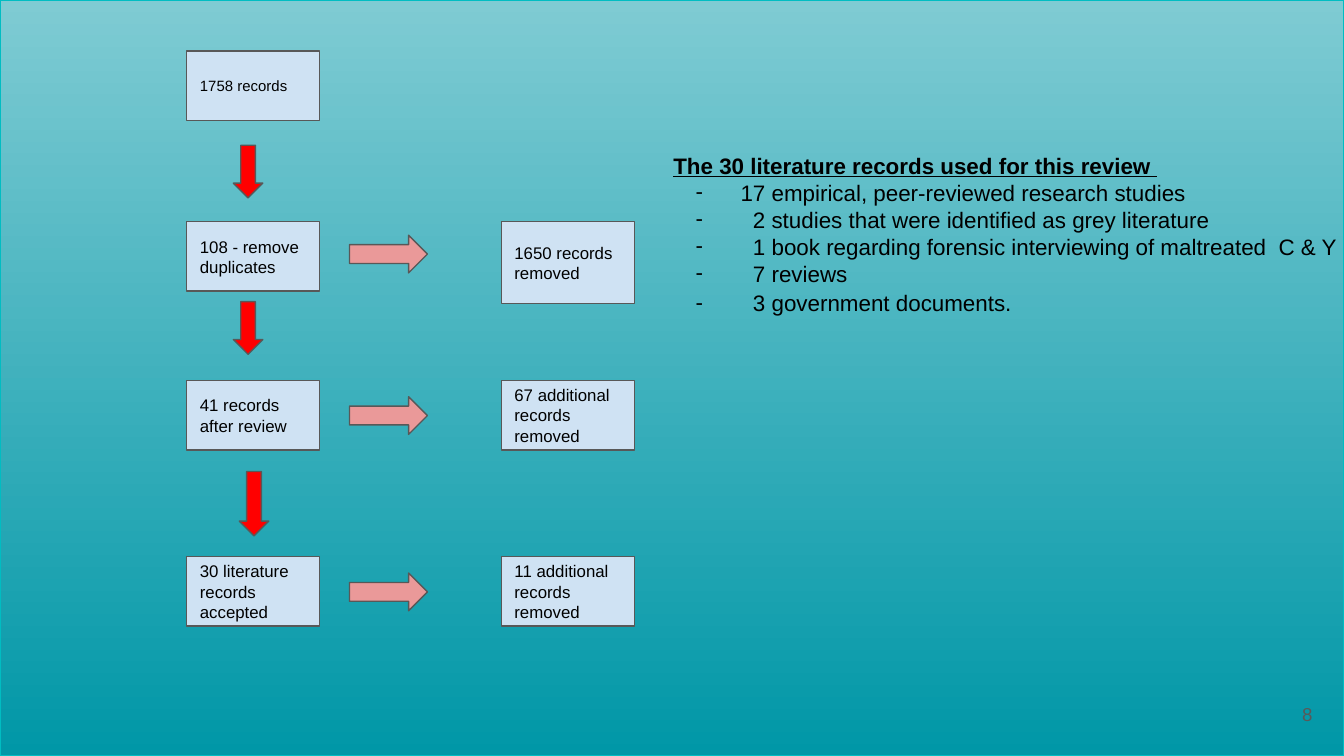
from lxml.etree import SubElement
from pptx import Presentation
from pptx.dml.color import RGBColor
from pptx.enum.shapes import MSO_SHAPE
from pptx.enum.text import MSO_ANCHOR, MSO_AUTO_SIZE, PP_ALIGN
from pptx.oxml.ns import qn
from pptx.util import Pt

COLORS = {
    "background_bottom": "0097A7",
    "background_top": "7FCBD3",
    "background_line": "00BDC2",
    "box": "CFE2F3",
    "outline": "585858",
    "down_arrow": "FF0000",
    "right_arrow": "EA9999",
    "text": "000000",
    "number": "595959",
}
SLIDE_WIDTH, SLIDE_HEIGHT = 720, 405
KEPT_LEFT, REMOVED_LEFT = 100, 268.5
BOX_WIDTH, BOX_HEIGHT = 71.3, 37.2

# top, arrow top, kept records, removed records, height of the removed box
STAGES = [
    (118.8, 126, "108 - remove duplicates", "1650 records removed", 43.9),
    (203.9, 212.5, "41 records after review", "67 additional records removed", BOX_HEIGHT),
    (298.3, 307, "30 literature records accepted", "11 additional records removed", BOX_HEIGHT),
]
# left, top, height
DOWN_ARROWS = [(125, 77.8, 28.2), (125, 161.6, 28.2), (128.2, 252.6, 34.5)]
HEADING = "The 30 literature records used for this review "
# text, extra indent that lines up the single digits, space before
RECORD_TYPES = [
    ("17 empirical, peer-reviewed research studies", 0, 0),
    ("2 studies that were identified as grey literature", 6.67, 0),
    ("1 book regarding forensic interviewing of maltreated  C & Y", 6.67, 0),
    ("7 reviews", 6.67, 0),
    ("3 government documents.", 6.67, 1.6),
]


def color(name):
    return RGBColor.from_string(COLORS[name])


def add_text(paragraph, text, size=9, color_name="text", bold=False,
             underline=False, align=PP_ALIGN.LEFT):
    paragraph.text = text
    paragraph.alignment = align
    font = paragraph.font
    font.name = "Arial"
    font.size = Pt(size)
    font.bold = bold
    font.underline = underline
    font.color.rgb = color(color_name)


def set_frame(frame, horizontal=7.2, vertical=0, right=None, anchor=MSO_ANCHOR.MIDDLE):
    frame.word_wrap = True
    frame.auto_size = MSO_AUTO_SIZE.NONE
    frame.vertical_anchor = anchor
    frame.margin_left = Pt(horizontal)
    frame.margin_right = Pt(horizontal if right is None else right)
    frame.margin_top = frame.margin_bottom = Pt(vertical)


def add_shape(slide, kind, left, top, width, height, fill=None, line="outline"):
    shape = slide.shapes.add_shape(kind, Pt(left), Pt(top), Pt(width), Pt(height))
    shape.shadow.inherit = False
    if fill:
        shape.fill.solid()
        shape.fill.fore_color.rgb = color(fill)
    shape.line.color.rgb = color(line)
    shape.line.width = Pt(0.75)
    return shape


def add_background(slide):
    shape = add_shape(slide, MSO_SHAPE.RECTANGLE, 0, 0, SLIDE_WIDTH, SLIDE_HEIGHT,
                      line="background_line")
    shape.fill.gradient()
    shape.fill.gradient_angle = 90
    names = ("background_bottom", "background_top")
    for stop, position, name in zip(shape.fill.gradient_stops, (0, 1), names):
        stop.position = position
        stop.color.rgb = color(name)


def add_box(slide, left, top, text, height=BOX_HEIGHT, size=9):
    shape = add_shape(slide, MSO_SHAPE.RECTANGLE, left, top, BOX_WIDTH, height, "box")
    set_frame(shape.text_frame)
    add_text(shape.text_frame.paragraphs[0], text, size=size)


def add_dash(paragraph, extra):
    properties = paragraph._p.get_or_add_pPr()
    properties.set("marL", str(Pt(36 + extra)))
    properties.set("indent", str(-Pt(24 + extra)))
    bullet_color = SubElement(properties, qn("a:buClr"))
    SubElement(bullet_color, qn("a:srgbClr"), val=COLORS["text"])
    SubElement(properties, qn("a:buFont"), typeface="Arial")
    SubElement(properties, qn("a:buChar"), char="-")


def remove_bullet(paragraph):
    properties = paragraph._p.get_or_add_pPr()
    properties.set("marL", "0")
    properties.set("indent", "0")
    SubElement(properties, qn("a:buNone"))


def fill_record_list(body):
    body.left, body.top, body.width, body.height = Pt(353.5), Pt(74), Pt(366.5), Pt(106)
    frame = body.text_frame
    set_frame(frame, vertical=7.2, right=0, anchor=MSO_ANCHOR.TOP)
    heading = frame.paragraphs[0]
    remove_bullet(heading)
    add_text(heading, HEADING, size=12, bold=True, underline=True)
    for text, extra, space_before in RECORD_TYPES:
        paragraph = frame.add_paragraph()
        add_dash(paragraph, extra)
        add_text(paragraph, text, size=12)
        paragraph.space_before = Pt(space_before)
    for paragraph in frame.paragraphs:
        paragraph.line_spacing = Pt(14.45)
    heading.space_before = Pt(0)


def add_slide_number(slide):
    shape = slide.shapes.add_textbox(Pt(667), Pt(367), Pt(43.2), Pt(31))
    set_frame(shape.text_frame)
    add_text(shape.text_frame.paragraphs[0], "8", size=10, color_name="number",
             align=PP_ALIGN.RIGHT)


def main():
    presentation = Presentation()
    presentation.slide_width, presentation.slide_height = Pt(SLIDE_WIDTH), Pt(SLIDE_HEIGHT)
    slide = presentation.slides.add_slide(presentation.slide_layouts[1])
    title, body = slide.placeholders
    title.element.getparent().remove(title.element)

    add_background(slide)
    add_box(slide, KEPT_LEFT, 27.4, "1758 records", size=8)
    for top, arrow_top, kept, removed, removed_height in STAGES:
        add_box(slide, KEPT_LEFT, top, kept)
        add_shape(slide, MSO_SHAPE.RIGHT_ARROW, 187.2, arrow_top, 41.8, 20.2, "right_arrow")
        add_box(slide, REMOVED_LEFT, top, removed, height=removed_height)
    for left, top, height in DOWN_ARROWS:
        add_shape(slide, MSO_SHAPE.DOWN_ARROW, left, top, 15.8, height, "down_arrow")

    fill_record_list(body)
    slide.shapes._spTree.append(body.element)  # in front of the background
    add_slide_number(slide)
    presentation.save("out.pptx")


if __name__ == "__main__":
    main()
